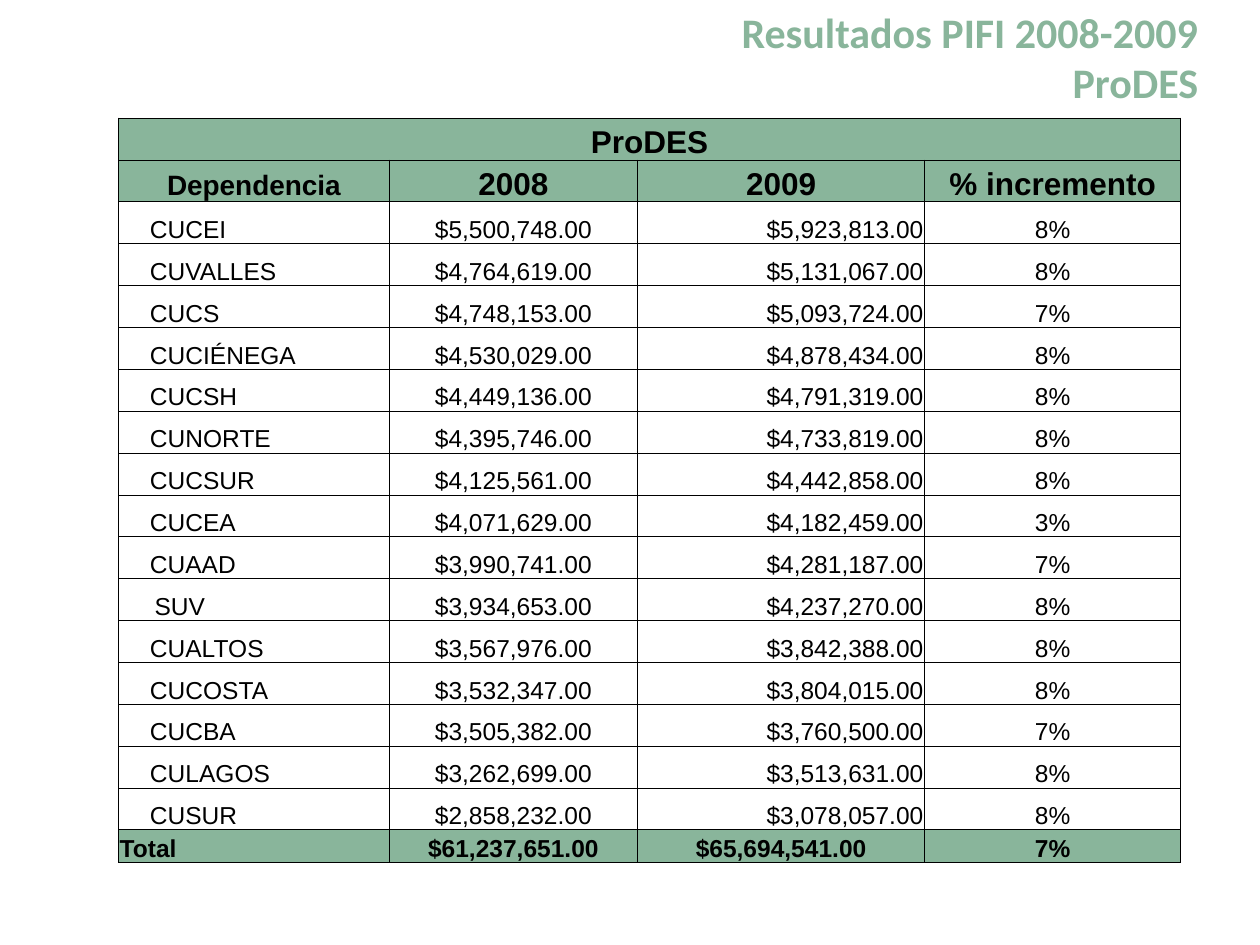
from dataclasses import dataclass
from typing import NamedTuple

from lxml.etree import SubElement
from pptx import Presentation
from pptx.dml.color import RGBColor
from pptx.enum.text import MSO_ANCHOR as Anchor, MSO_AUTO_SIZE as AutoSize, PP_ALIGN as Align
from pptx.oxml.ns import qn
from pptx.util import Inches, Pt

GREEN, BLACK, WHITE = "89B59B", "000000", "FFFFFF"
SLIDE_W, SLIDE_H = Inches(10), Inches(7.5)
COLUMN_WIDTHS = (2.15, 1.97, 2.28, 2.03)
ROW_HEIGHT, TOTAL_HEIGHT = 0.3325, 0.26
BODY_ALIGN = (Align.LEFT, Align.CENTER, Align.RIGHT, Align.CENTER)
TOTAL_ALIGN = (Align.LEFT, Align.CENTER, Align.CENTER, Align.CENTER)


@dataclass(frozen=True)
class Style:
    size: float = 14
    bold: bool = False
    font: str = "Arial"
    color: str = BLACK


class Budget(NamedTuple):
    name: str
    y2008: int
    y2009: int

    def texts(self) -> tuple:
        growth = self.y2009 / self.y2008 - 1
        return self.name, f"${self.y2008:,}.00", f"${self.y2009:,}.00", f"{growth:.0%}"


BODY, TOTAL = Style(), Style(bold=True)
HEADING, SMALL_HEADING = Style(18, True), Style(16, True)
TITLE = Style(24, True, "Calibri", GREEN)
SPACER = Style(10.5, font="Times New Roman")

BUDGETS = [
    Budget("CUCEI", 5500748, 5923813),
    Budget("CUVALLES", 4764619, 5131067),
    Budget("CUCS", 4748153, 5093724),
    Budget("CUCIÉNEGA", 4530029, 4878434),
    Budget("CUCSH", 4449136, 4791319),
    Budget("CUNORTE", 4395746, 4733819),
    Budget("CUCSUR", 4125561, 4442858),
    Budget("CUCEA", 4071629, 4182459),
    Budget("CUAAD", 3990741, 4281187),
    Budget("SUV", 3934653, 4237270),
    Budget("CUALTOS", 3567976, 3842388),
    Budget("CUCOSTA", 3532347, 3804015),
    Budget("CUCBA", 3505382, 3760500),
    Budget("CULAGOS", 3262699, 3513631),
    Budget("CUSUR", 2858232, 3078057),
]


def rgb(color: str) -> RGBColor:
    return RGBColor.from_string(color)


def add_run(paragraph, text: str, style: Style) -> None:
    run = paragraph.add_run()
    run.text = text
    run.font.name = style.font
    run.font.size = Pt(style.size)
    run.font.bold = style.bold
    run.font.color.rgb = rgb(style.color)


def add_borders(cell) -> None:
    properties = cell._tc.get_or_add_tcPr()
    for side in ("a:lnL", "a:lnR", "a:lnT", "a:lnB"):
        line = SubElement(properties, qn(side), w=str(Pt(0.5)))
        SubElement(SubElement(line, qn("a:solidFill")), qn("a:srgbClr"), val=BLACK)


def format_cell(cell, fill: str, indent: float = 0.01) -> None:
    add_borders(cell)
    cell.fill.solid()
    cell.fill.fore_color.rgb = rgb(fill)
    cell.vertical_anchor = Anchor.BOTTOM
    cell.margin_left = Inches(indent)
    cell.margin_right = cell.margin_top = Inches(0.01)
    cell.margin_bottom = 0


def write_cell(cell, text: str, style: Style, align: Align) -> None:
    paragraph = cell.text_frame.paragraphs[0]
    paragraph.alignment = align
    if text == "SUV":
        add_run(paragraph, " ", SPACER)
    add_run(paragraph, text, style)


def add_title(slide) -> None:
    title = slide.shapes.title
    title.left, title.top = int(SLIDE_W * 0.164), 0
    title.width, title.height = int(SLIDE_W * 0.797), Inches(0.91)
    frame = title.text_frame
    frame.word_wrap = True
    frame.auto_size = AutoSize.SHAPE_TO_FIT_TEXT
    frame.vertical_anchor = Anchor.TOP
    for index, text in enumerate(("Resultados PIFI 2008-2009", "ProDES")):
        paragraph = frame.add_paragraph() if index else frame.paragraphs[0]
        paragraph.alignment = Align.RIGHT
        add_run(paragraph, text, TITLE)


def add_budget_table(slide) -> None:
    row_count = len(BUDGETS) + 3
    height = ROW_HEIGHT * (row_count - 1) + TOTAL_HEIGHT
    table = slide.shapes.add_table(
        row_count, len(COLUMN_WIDTHS), int(SLIDE_W * 0.094), int(SLIDE_H * 0.125),
        Inches(sum(COLUMN_WIDTHS)), Inches(height)).table
    for column, width in zip(table.columns, COLUMN_WIDTHS):
        column.width = Inches(width)
    for row in table.rows:
        row.height = Inches(ROW_HEIGHT)
    table.rows[row_count - 1].height = Inches(TOTAL_HEIGHT)

    for cell in table.rows[0].cells:
        format_cell(cell, GREEN)
    table.cell(0, 0).merge(table.cell(0, len(COLUMN_WIDTHS) - 1))
    write_cell(table.cell(0, 0), "ProDES", HEADING, Align.CENTER)

    for col, text in enumerate(("Dependencia", "2008", "2009", "% incremento")):
        cell = table.cell(1, col)
        format_cell(cell, GREEN)
        write_cell(cell, text, HEADING if col else SMALL_HEADING, Align.CENTER)

    for row, budget in enumerate(BUDGETS, start=2):
        for col, text in enumerate(budget.texts()):
            cell = table.cell(row, col)
            format_cell(cell, WHITE, 0.01 if col else 0.25)
            write_cell(cell, text, BODY, BODY_ALIGN[col])

    total = Budget("Total", sum(b.y2008 for b in BUDGETS), sum(b.y2009 for b in BUDGETS))
    for col, text in enumerate(total.texts()):
        cell = table.cell(row_count - 1, col)
        format_cell(cell, GREEN)
        write_cell(cell, text, TOTAL, TOTAL_ALIGN[col])


def main() -> None:
    deck = Presentation()
    deck.slide_width, deck.slide_height = SLIDE_W, SLIDE_H
    slide = deck.slides.add_slide(deck.slide_layouts[5])
    add_title(slide)
    add_budget_table(slide)
    deck.save("out.pptx")


if __name__ == "__main__":
    main()
